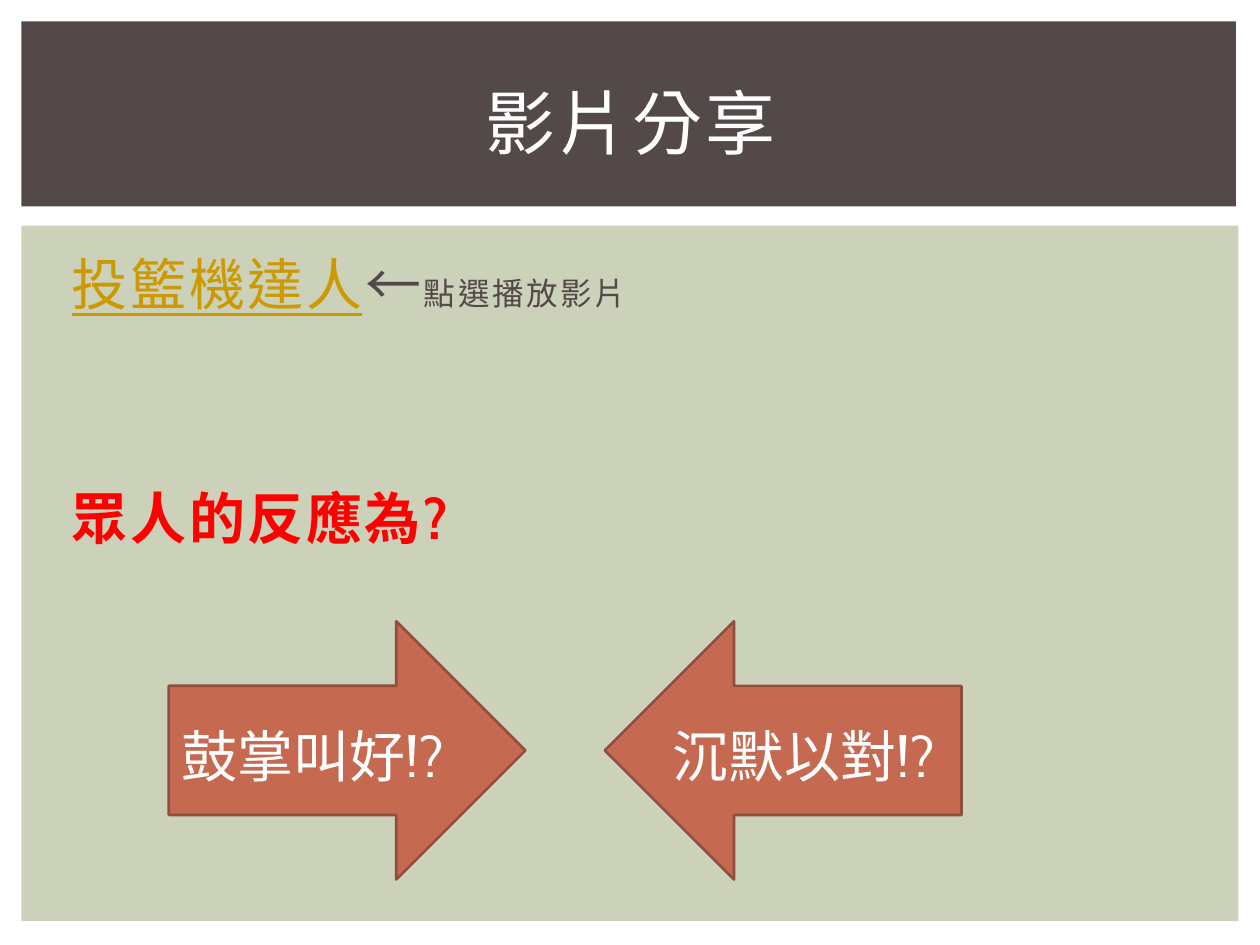
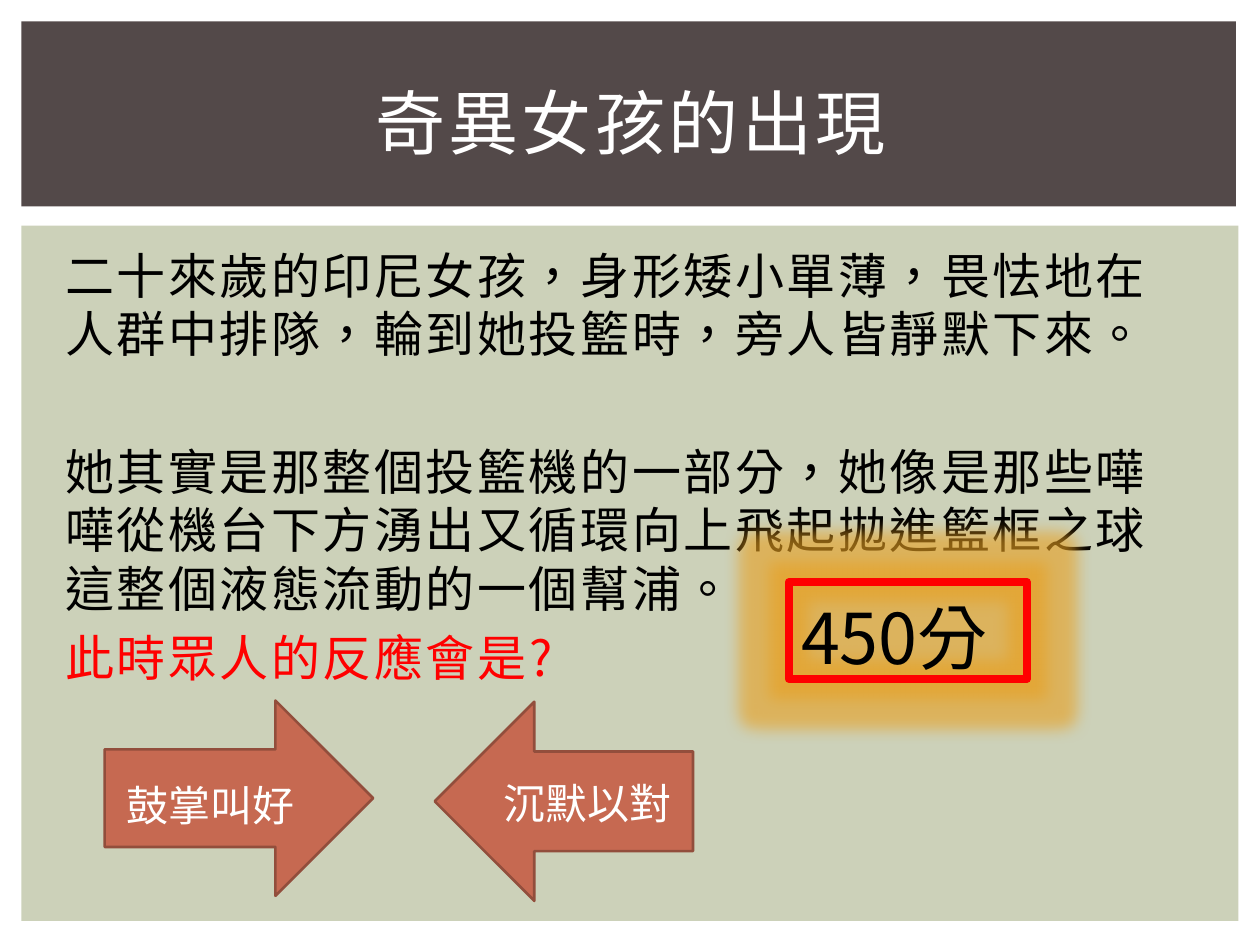
"""Build two slides about the basketball machine story."""
from dataclasses import dataclass

from lxml import etree
from pptx import Presentation
from pptx.dml.color import RGBColor
from pptx.enum.shapes import MSO_SHAPE
from pptx.enum.text import MSO_ANCHOR, PP_ALIGN
from pptx.oxml.ns import qn
from pptx.shapes.autoshape import Shape
from pptx.slide import Slide
from pptx.util import Pt

RECTANGLE = MSO_SHAPE.RECTANGLE
RIGHT_ARROW = MSO_SHAPE.RIGHT_ARROW
MIDDLE, TOP = MSO_ANCHOR.MIDDLE, MSO_ANCHOR.TOP
CENTER, LEFT = PP_ALIGN.CENTER, PP_ALIGN.LEFT

WHITE = RGBColor(0xFF, 0xFF, 0xFF)
BLACK = RGBColor(0, 0, 0)
RED = RGBColor(0xFF, 0, 0)
SAGE = RGBColor(0xCC, 0xD1, 0xB9)
BROWN = RGBColor(0x53, 0x49, 0x49)
GOLD = RGBColor(0xCC, 0x99, 0)
TERRACOTTA = RGBColor(0xC6, 0x69, 0x51)
RUST = RGBColor(0x92, 0x4E, 0x3C)
GLOW = RGBColor(0xE8, 0xA0, 0x20)

CABIN = "Cabin"
NOTO = "Noto Sans CJK SC"
BODY_PITCH = 1.193
LABEL_PITCH = 1.29


@dataclass(frozen=True)
class Box:
    """Place of an element, in points."""
    left: float
    top: float
    width: float
    height: float

    def lengths(self) -> tuple[Pt, Pt, Pt, Pt]:
        """Return the four lengths for a shape call."""
        return Pt(self.left), Pt(self.top), Pt(self.width), Pt(self.height)


@dataclass(frozen=True)
class Span:
    """Words that differ from the rest of their paragraph."""
    words: str
    color: RGBColor
    size: float
    underline: bool = False


@dataclass(frozen=True)
class Line:
    """A paragraph and its look."""
    content: str | tuple[Span, ...]
    size: float
    color: RGBColor
    face: str = CABIN
    bold: bool = False
    tracking: float = 0
    pitch: float = 0
    before: float = 0
    align: PP_ALIGN = LEFT


@dataclass(frozen=True)
class Reaction:
    """An arrow with a caption laid over it."""
    words: str
    size: float
    arrow: Box
    caption: Box
    rotation: float = 0


BODY_BAND = Box(12.2, 128.9, 695.5, 397.4)
TITLE_BAND = Box(12.2, 12.2, 694.1, 105.8)
TITLE = Box(30.2, 28.1, 660.2, 82.8)
VIDEO_BODY = Box(30.2, 135.4, 661.7, 347)
STORY_BODY = Box(30.2, 133.9, 661.7, 391)
SCORE = Box(450.7, 332.6, 136.1, 55.4)

VIDEO_LINES = (
    Line((Span("投籃機達人", GOLD, 32, True), Span("←", BROWN, 32),
          Span("點選播放影片", BROWN, 18)),
         32, BROWN, tracking=1.5, pitch=BODY_PITCH),
    Line("眾人的反應為?", 32, RED, bold=True, tracking=1.5,
         pitch=BODY_PITCH, before=95.5),
)
STORY = (
    ("二十來歲的印尼女孩，身形矮小單薄，畏怯地在人群中排隊，輪到她投籃時，旁人皆靜默下來。",
     BLACK, 0),
    ("她其實是那整個投籃機的一部分，她像是那些嘩嘩從機台下方湧出又循環向上飛起拋進籃框之球"
     "這整個液態流動的一個幫浦。", BLACK, 45.4),
    ("此時眾人的反應會是?", RED, 6.2),
)
STORY_LINES = tuple(
    Line(words, 28, color, NOTO, tracking=1.5, pitch=BODY_PITCH, before=before)
    for words, color, before in STORY)
VIDEO_REACTIONS = (
    Reaction("鼓掌叫好!?", 32, Box(96.5, 355, 203.8, 147.6),
             Box(96.5, 406.1, 187.2, 46.1)),
    Reaction("沉默以對!?", 32, Box(345.6, 355, 203.8, 147.6),
             Box(377.3, 406.1, 187.2, 46.1), 180),
)
STORY_REACTIONS = (
    Reaction("鼓掌叫好", 24, Box(59.8, 400.3, 153.4, 111.6),
             Box(65.5, 439.9, 129.6, 36)),
    Reaction("沉默以對", 24, Box(248.4, 401, 147.6, 113.8),
             Box(280.8, 438.5, 138.2, 36), 180),
)


def add_block(slide: Slide, kind: MSO_SHAPE, box: Box,
              fill: RGBColor | None = None, outline: RGBColor | None = None,
              weight: float = 1.5) -> Shape:
    """Draw a preset shape without a shadow."""
    block = slide.shapes.add_shape(kind, *box.lengths())
    block.shadow.inherit = False
    if fill is None:
        block.fill.background()
    else:
        block.fill.solid()
        block.fill.fore_color.rgb = fill
    if outline is None:
        block.line.fill.background()
    else:
        block.line.color.rgb = outline
        block.line.width = Pt(weight)
    return block


def write(holder: Shape, lines: tuple[Line, ...], anchor: MSO_ANCHOR = TOP,
          inset_left: float = 7.2, inset_top: float = 3.6) -> None:
    """Fill a shape with styled paragraphs."""
    frame = holder.text_frame
    frame.word_wrap = True
    frame.vertical_anchor = anchor
    frame.margin_left, frame.margin_top = Pt(inset_left), Pt(inset_top)
    for index, line in enumerate(lines):
        paragraph = frame.add_paragraph() if index else frame.paragraphs[0]
        paragraph.alignment = line.align
        paragraph.space_before = Pt(line.before)
        if line.pitch:
            paragraph.line_spacing = Pt(round(line.size * line.pitch, 1))
        font = paragraph.font
        font.size, font.name, font.bold = Pt(line.size), line.face, line.bold
        font.color.rgb = line.color
        properties = paragraph._p.pPr.find(qn("a:defRPr"))
        properties.set("lang", "zh-TW")
        properties.set("spc", str(round(line.tracking * 100)))
        latin = properties.find(qn("a:latin"))
        east_asian = etree.Element(qn("a:ea"), typeface=NOTO)
        latin.addnext(east_asian)
        if isinstance(line.content, str):
            paragraph.add_run().text = line.content
            continue
        for span in line.content:
            run = paragraph.add_run()
            run.text = span.words
            run.font.size = Pt(span.size)
            run.font.color.rgb = span.color
            run.font.underline = span.underline


def add_text(slide: Slide, box: Box, lines: tuple[Line, ...],
             anchor: MSO_ANCHOR = TOP, inset_left: float = 7.2,
             inset_top: float = 3.6) -> None:
    """Add a text box with styled paragraphs."""
    write(slide.shapes.add_textbox(*box.lengths()), lines, anchor,
          inset_left, inset_top)


def add_reaction(slide: Slide, reaction: Reaction) -> None:
    """Draw an arrow and its caption."""
    arrow = add_block(slide, RIGHT_ARROW, reaction.arrow, TERRACOTTA, RUST)
    arrow.rotation = reaction.rotation
    caption = Line(reaction.words, reaction.size, WHITE, pitch=LABEL_PITCH)
    add_text(slide, reaction.caption, (caption,))


def add_score(slide: Slide) -> None:
    """Draw the glowing score frame."""
    score = add_block(slide, RECTANGLE, SCORE, outline=RED, weight=4.5)
    effects = score._element.spPr.find(qn("a:effectLst"))
    glow = etree.SubElement(effects, qn("a:glow"), rad=str(Pt(18)))
    tint = etree.SubElement(glow, qn("a:srgbClr"), val=str(GLOW))
    etree.SubElement(tint, qn("a:alpha"), val="60000")
    write(score, (Line("450分", 40, BLACK, NOTO, pitch=LABEL_PITCH),))


def add_base(deck: Presentation, title: str, face: str) -> Slide:
    """Add a slide with both bands and its title."""
    slide = deck.slides.add_slide(deck.slide_layouts[6])
    add_block(slide, RECTANGLE, BODY_BAND, SAGE)
    add_block(slide, RECTANGLE, TITLE_BAND, BROWN)
    heading = Line(title, 40, WHITE, face, tracking=2, align=CENTER)
    add_text(slide, TITLE, (heading,), MIDDLE)
    return slide


def main() -> None:
    """Build and save the deck."""
    deck = Presentation()
    deck.slide_width, deck.slide_height = Pt(720), Pt(540)

    video = add_base(deck, "影片分享", CABIN)
    add_text(video, VIDEO_BODY, VIDEO_LINES, inset_left=10.8, inset_top=7.5)
    for reaction in VIDEO_REACTIONS:
        add_reaction(video, reaction)

    story = add_base(deck, "奇異女孩的出現", NOTO)
    add_text(story, STORY_BODY, STORY_LINES, inset_top=6.4)
    add_score(story)
    for reaction in STORY_REACTIONS:
        add_reaction(story, reaction)

    deck.save("out.pptx")


if __name__ == "__main__":
    main()
